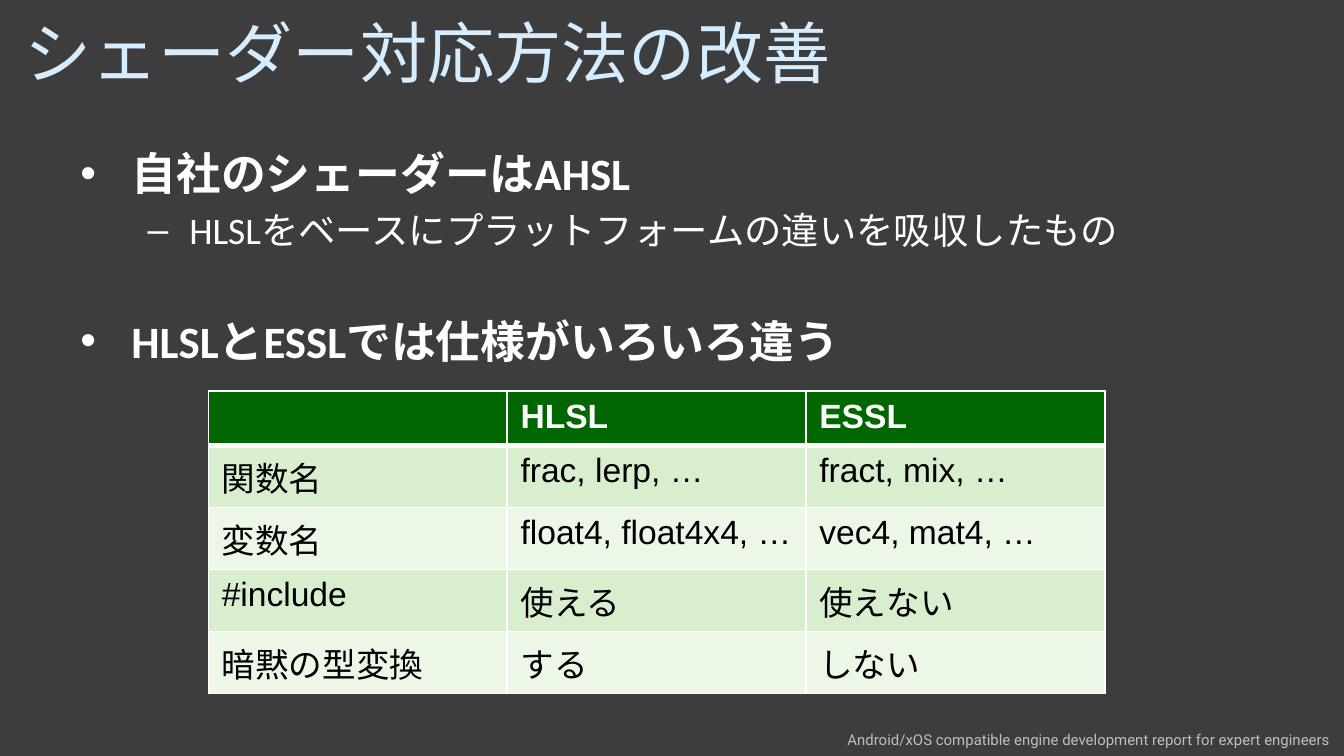
from lxml import etree
from pptx import Presentation, util as u
from pptx.dml.color import RGBColor
from pptx.enum import text as t
from pptx.oxml import ns

WIDE = u.Inches(10)
HIGH = WIDE * 9 // 16
BACK = RGBColor(0x3D, 0x3D, 0x3D)
WHITE = RGBColor(0xFF, 0xFF, 0xFF)
BLACK = RGBColor(0, 0, 0)
SKY = RGBColor(0xD6, 0xEC, 0xFF)
GREY = RGBColor(0xBF, 0xBF, 0xBF)
GREEN = RGBColor(0, 0x66, 0)
BANDS = RGBColor(0xEC, 0xF7, 0xE8), RGBColor(0xD8, 0xEE, 0xCE)

HEAD = dict(name="Calibri", size=u.Pt(36), color=SKY)
FOOT = dict(name="Roboto", size=u.Pt(8), color=GREY)
LEVELS = [
    dict(mark="•", left=0.38, hang=0.38,
         font=dict(name="Calibri", size=u.Pt(24), bold=True, color=WHITE)),
    dict(mark="–", left=0.81, hang=0.31,
         font=dict(name="Calibri", size=u.Pt(20), bold=False, color=WHITE)),
]
# level, space before in points, wording
POINTS = [
    (0, 0, "自社のシェーダーはAHSL"),
    (1, 4, "HLSLをベースにプラットフォームの違いを吸収したもの"),
    (0, 33, "HLSLとESSLでは仕様がいろいろ違う"),
]
ROWS = [
    ("", "HLSL", "ESSL"),
    ("関数名", "frac, lerp, …", "fract, mix, …"),
    ("変数名", "float4, float4x4, …", "vec4, mat4, …"),
    ("#include", "使える", "使えない"),
    ("暗黙の型変換", "する", "しない"),
]


def area(x, y, w, h):
    """Turn percentages of the slide into a box of lengths."""
    return [int(part * side / 100)
            for part, side in zip((x, y, w, h), (WIDE, HIGH) * 2)]


def style(font, look):
    for key, value in look.items():
        if key == "color":
            font.color.rgb = value
        else:
            setattr(font, key, value)


def write(para, words, look):
    run = para.add_run()
    run.text = words
    style(run.font, look)


def add(parent, tag, **attrs):
    return etree.SubElement(parent, ns.qn(tag), attrs)


def title(slide, box):
    shape = slide.shapes.title
    for key, value in zip(("left", "top", "width", "height"), box):
        setattr(shape, key, value)
    frame = shape.text_frame
    frame.auto_size = t.MSO_AUTO_SIZE.NONE
    frame.vertical_anchor = t.MSO_ANCHOR.MIDDLE
    para = frame.paragraphs[0]
    para.alignment = t.PP_ALIGN.LEFT
    write(para, "シェーダー対応方法の改善", HEAD)


def bullets(slide, box):
    frame = slide.shapes.add_textbox(*box).text_frame
    frame.word_wrap = True
    for i, (level, gap, words) in enumerate(POINTS):
        para = frame.add_paragraph() if i else frame.paragraphs[0]
        look = LEVELS[level]
        para.level = level
        props = para._p.get_or_add_pPr()
        props.set("marL", str(u.Inches(look["left"])))
        props.set("indent", str(-u.Inches(look["hang"])))
        add(props, "a:buFont", typeface="Arial")
        add(props, "a:buChar", char=look["mark"])
        if gap:
            para.space_before = u.Pt(gap)
        write(para, words, look["font"])


def border(cell, top, bottom):
    props = cell._tc.get_or_add_tcPr()
    for side, width in zip("LRTB", (1, 1, top, bottom)):
        line = add(props, f"a:ln{side}", w=str(u.Pt(width)))
        fill = add(line, "a:solidFill")
        add(fill, "a:srgbClr", val=str(WHITE))


def grid(slide, box):
    """Header row takes 18 % of the height, the others share the rest."""
    table = slide.shapes.add_table(len(ROWS), len(ROWS[0]), *box).table
    tall = box[3]
    for r, row in enumerate(ROWS):
        table.rows[r].height = int(tall * (0.205 if r else 0.18))
        look = dict(name="Arial", size=u.Pt(18), bold=r == 0,
                    color=BLACK if r else WHITE)
        for c, words in enumerate(row):
            cell = table.cell(r, c)
            border(cell, 3 if r == 1 else 1, 1 if r else 3)
            cell.fill.solid()
            cell.fill.fore_color.rgb = BANDS[r % 2] if r else GREEN
            if words:
                write(cell.text_frame.paragraphs[0], words, look)


def footer(slide, box):
    frame = slide.shapes.add_textbox(*box).text_frame
    frame.word_wrap = True
    para = frame.paragraphs[0]
    para.alignment = t.PP_ALIGN.RIGHT
    write(para, "Android/xOS compatible engine development report "
          "for expert engineers", FOOT)


def main():
    deck = Presentation()
    deck.slide_width, deck.slide_height = WIDE, HIGH
    slide = deck.slides.add_slide(deck.slide_layouts[5])
    slide.background.fill.solid()
    slide.background.fill.fore_color.rgb = BACK
    footer(slide, area(61.8, 95.8, 38.2, 4.2))
    title(slide, area(0.8, 1, 97.9, 11.7))
    bullets(slide, area(5, 18.4, 94.2, 69.9))
    grid(slide, area(15.5, 51.75, 66.7, 40))
    deck.save("out.pptx")


if __name__ == "__main__":
    main()
